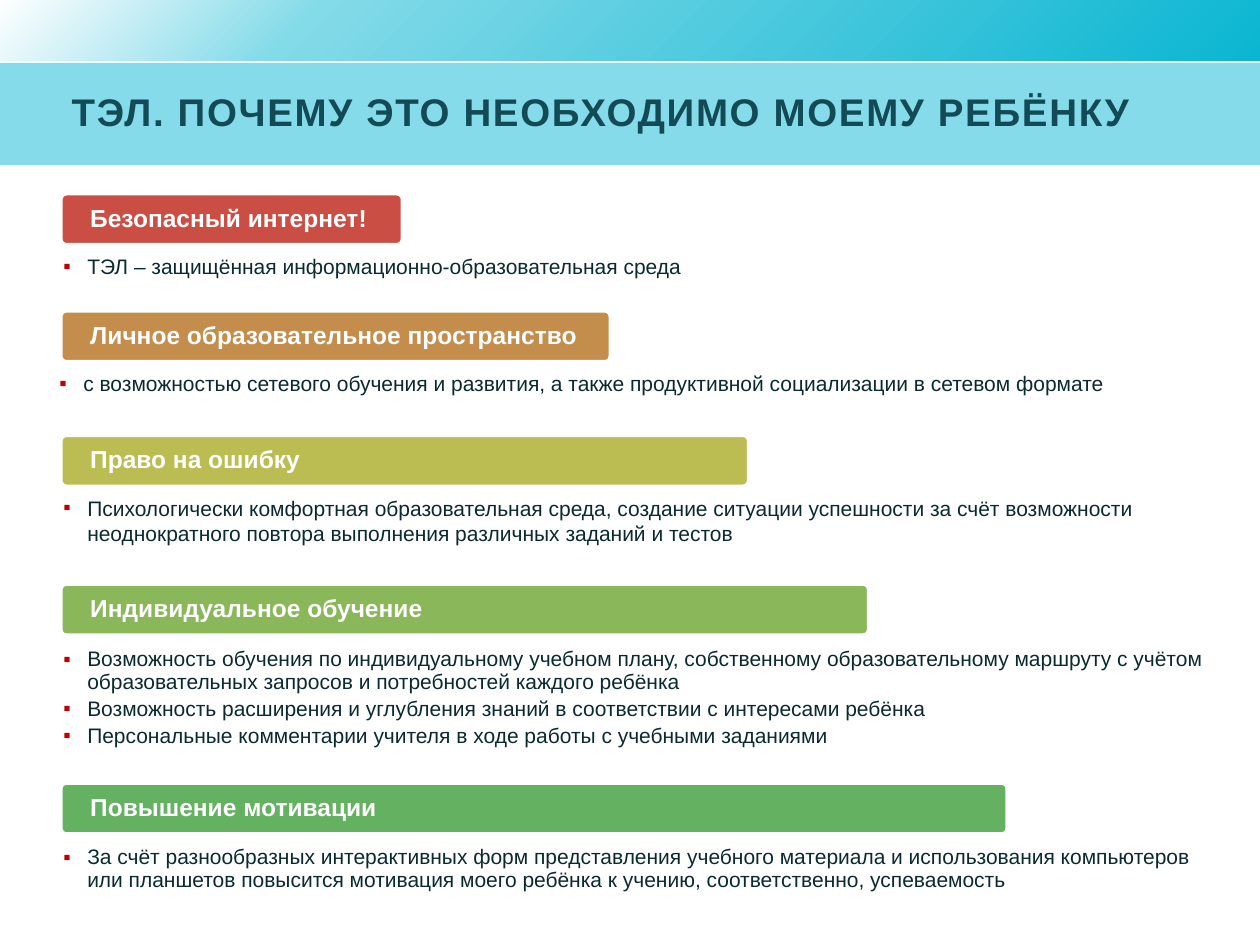
from lxml import etree
from pptx import Presentation
from pptx.dml.color import RGBColor
from pptx.enum.shapes import MSO_SHAPE as Shape
from pptx.enum.text import MSO_ANCHOR as Anchor, MSO_AUTO_SIZE as AutoSize, PP_ALIGN as Align
from pptx.oxml import parse_xml
from pptx.oxml.ns import nsdecls, qn
from pptx.util import Cm, Pt

COLORS = {
    "teal": "0BB6D2", "aqua": "83DAE8", "band": "85DBE9", "white": "FFFFFF",
    "title": "124B55", "body": "0A2A30", "bullet": "C00000",
    "red": "CA4E44", "orange": "C48D4B", "olive": "BBBD53",
    "lime": "89B75A", "green": "64B161",
}
FONT = "Arial"
SLIDE_WIDTH, SLIDE_HEIGHT = 25.4, 19.05
BANNER_LEFT, BANNER_HEIGHT = 1.24, 1.0
BODY_WIDTH = 24.41

# heading, color, banner top, banner width,
# bullets, bullets left, gap from banner top, bullets height, line spacing
SECTIONS = [
    ("Безопасный интернет!", "red", 3.92, 6.86,
     ["ТЭЛ – защищённая информационно-образовательная среда"],
     0.51, 1.14, 0.84, 1.0),
    ("Личное образовательное пространство", "orange", 6.28, 11.05,
     ["с возможностью сетевого обучения и развития, а также продуктивной "
      "социализации в сетевом формате"],
     0.43, 1.14, 1.17, 1.0),
    ("Право на ошибку", "olive", 8.79, 13.84,
     ["Психологически комфортная образовательная среда, создание ситуации "
      "успешности за счёт возможности неоднократного повтора выполнения "
      "различных заданий и тестов"],
     0.51, 1.14, 1.24, 1.0),
    ("Индивидуальное обучение", "lime", 11.79, 16.26,
     ["Возможность обучения по индивидуальному учебном плану, собственному "
      "образовательному маршруту с учётом образовательных запросов и "
      "потребностей каждого ребёнка",
      "Возможность расширения и углубления знаний в соответствии с интересами ребёнка",
      "Персональные комментарии учителя в ходе работы с учебными заданиями"],
     0.51, 1.24, 2.16, 0.9),
    ("Повышение мотивации", "green", 15.8, 19.05,
     ["За счёт разнообразных интерактивных форм представления учебного материала "
      "и использования компьютеров или планшетов повысится мотивация моего ребёнка "
      "к учению, соответственно, успеваемость"],
     0.51, 1.22, 1.19, 0.9),
]


def rgb(name):
    return RGBColor.from_string(COLORS[name])


def add_block(slide, preset, box, color):
    block = slide.shapes.add_shape(preset, *map(Cm, box))
    block.shadow.inherit = False
    block.fill.solid()
    block.fill.fore_color.rgb = rgb(color)
    block.line.fill.background()
    return block


def add_run(paragraph, text, size, color, bold=False):
    run = paragraph.add_run()
    run.text = text
    run.font.name = FONT
    run.font.size = Pt(size)
    run.font.bold = bold
    run.font.color.rgb = rgb(color)
    return run


def set_insets(frame, left, top, right, bottom):
    frame.margin_left, frame.margin_top = Cm(left), Cm(top)
    frame.margin_right, frame.margin_bottom = Cm(right), Cm(bottom)


def set_indent(paragraph, left, first=0):
    properties = paragraph._p.get_or_add_pPr()
    properties.set("marL", str(Cm(left)))
    properties.set("indent", str(Cm(first)))
    return properties


def add_bullet(paragraph):
    properties = set_indent(paragraph, 0.48, -0.48)
    color = etree.SubElement(properties, qn("a:buClr"))
    etree.SubElement(color, qn("a:srgbClr"), val=COLORS["bullet"])
    etree.SubElement(properties, qn("a:buFont"), typeface=FONT)
    etree.SubElement(properties, qn("a:buChar"), char="▪")


def apply_radial_gradient(block, stops):
    """Replace the solid fill by a gradient centred on the bottom right corner."""
    stop_xml = "".join(
        f'<a:gs pos="{position * 1000}"><a:srgbClr val="{COLORS[name]}"/></a:gs>'
        for position, name in stops)
    gradient = parse_xml(
        f'<a:gradFill {nsdecls("a")} rotWithShape="1"><a:gsLst>{stop_xml}</a:gsLst>'
        '<a:path path="circle"><a:fillToRect l="100000" t="100000"/></a:path></a:gradFill>')
    properties = block._element.spPr
    properties.replace(properties.find(qn("a:solidFill")), gradient)


def add_header(slide, text, width):
    strip = add_block(slide, Shape.RECTANGLE, (0, -0.05, width, 1.27), "teal")
    apply_radial_gradient(strip, [(0, "teal"), (75, "aqua"), (100, "white")])
    add_block(slide, Shape.RECTANGLE, (0, 1.27, width, 2.06), "band")

    title = slide.shapes.title
    slide.shapes._spTree.append(title._element)  # bring above the band
    title.left, title.top, title.width, title.height = map(Cm, (0, 1.32, width, 2.0))
    frame = title.text_frame
    frame.auto_size = AutoSize.NONE
    frame.vertical_anchor = Anchor.MIDDLE
    paragraph = frame.paragraphs[0]
    paragraph.alignment = Align.LEFT
    paragraph.line_spacing = 0.8
    set_indent(paragraph, 1.19)
    run = add_run(paragraph, text, 22, "title", bold=True)
    run.font._element.set("spc", "100")


def add_banner(slide, box, text, color):
    banner = add_block(slide, Shape.ROUNDED_RECTANGLE, box, color)
    banner.adjustments[0] = 0.1
    banner.line.color.rgb = rgb("white")
    banner.line.width = Pt(1.25)
    frame = banner.text_frame
    frame.word_wrap = True
    frame.vertical_anchor = Anchor.MIDDLE
    set_insets(frame, 0.18, 0.18, 0.18, 0.18)
    paragraph = frame.paragraphs[0]
    paragraph.alignment = Align.LEFT
    paragraph.line_spacing = 0.9
    set_indent(paragraph, 0.37)
    add_run(paragraph, text, 14, "white", bold=True)


def add_bullets(slide, box, bullets, line_spacing):
    frame = slide.shapes.add_textbox(*map(Cm, box)).text_frame
    frame.word_wrap = True
    set_insets(frame, 0.77, 0.05, 0.23, 0.05)
    for index, text in enumerate(bullets):
        paragraph = frame.add_paragraph() if index else frame.paragraphs[0]
        add_bullet(paragraph)
        paragraph.line_spacing = line_spacing
        paragraph.space_after = Pt(2.4)
        add_run(paragraph, text, 12, "body")


def add_section(slide, heading, color, top, width, bullets, left, gap, height, line_spacing):
    add_banner(slide, (BANNER_LEFT, top, width, BANNER_HEIGHT), heading, color)
    add_bullets(slide, (left, top + gap, BODY_WIDTH, height), bullets, line_spacing)


def main():
    deck = Presentation()
    deck.slide_width, deck.slide_height = Cm(SLIDE_WIDTH), Cm(SLIDE_HEIGHT)
    slide = deck.slides.add_slide(deck.slide_layouts[5])
    add_header(slide, "ТЭЛ. ПОЧЕМУ ЭТО НЕОБХОДИМО МОЕМУ РЕБЁНКУ", SLIDE_WIDTH)
    for section in SECTIONS:
        add_section(slide, *section)
    deck.save("out.pptx")


if __name__ == "__main__":
    main()
